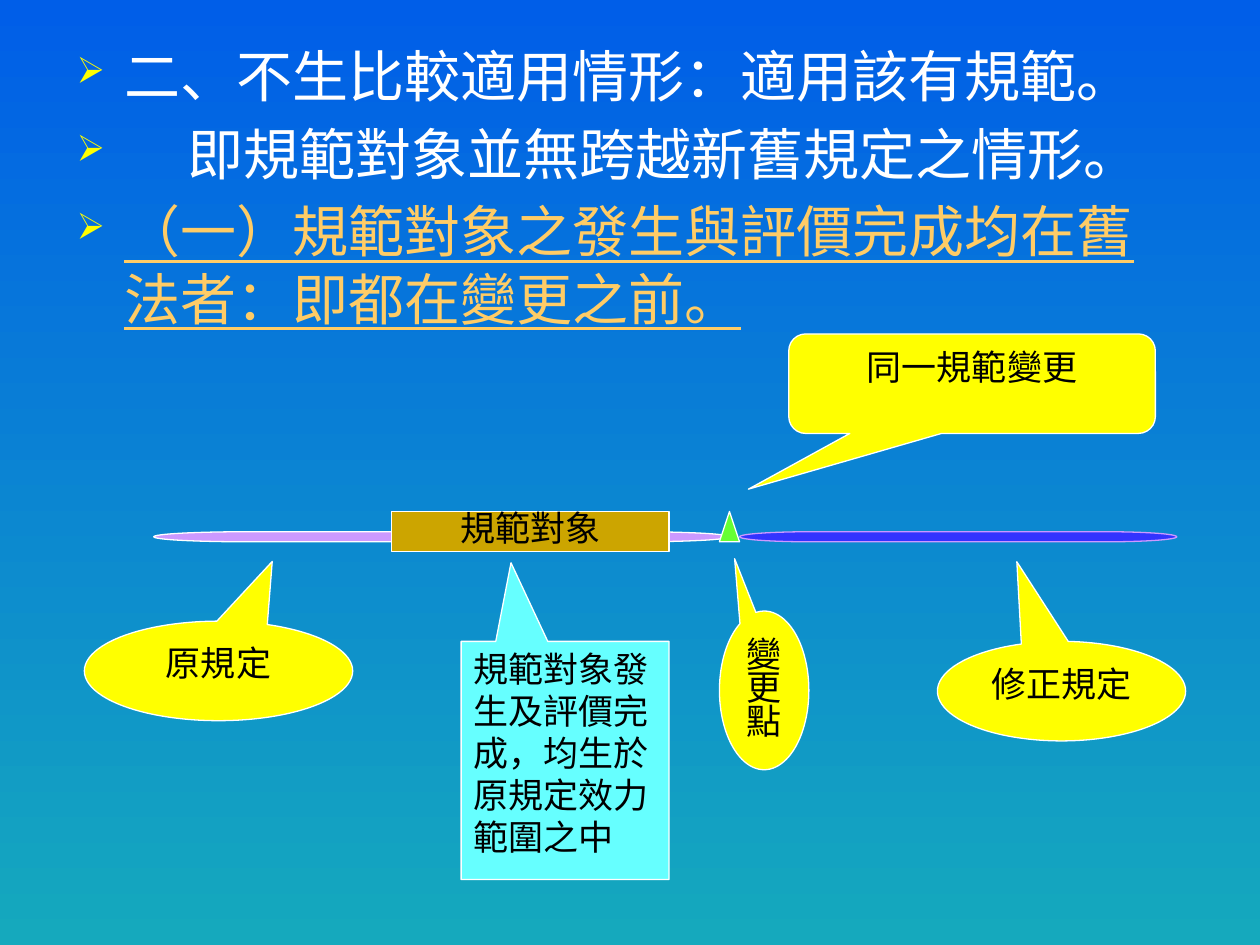
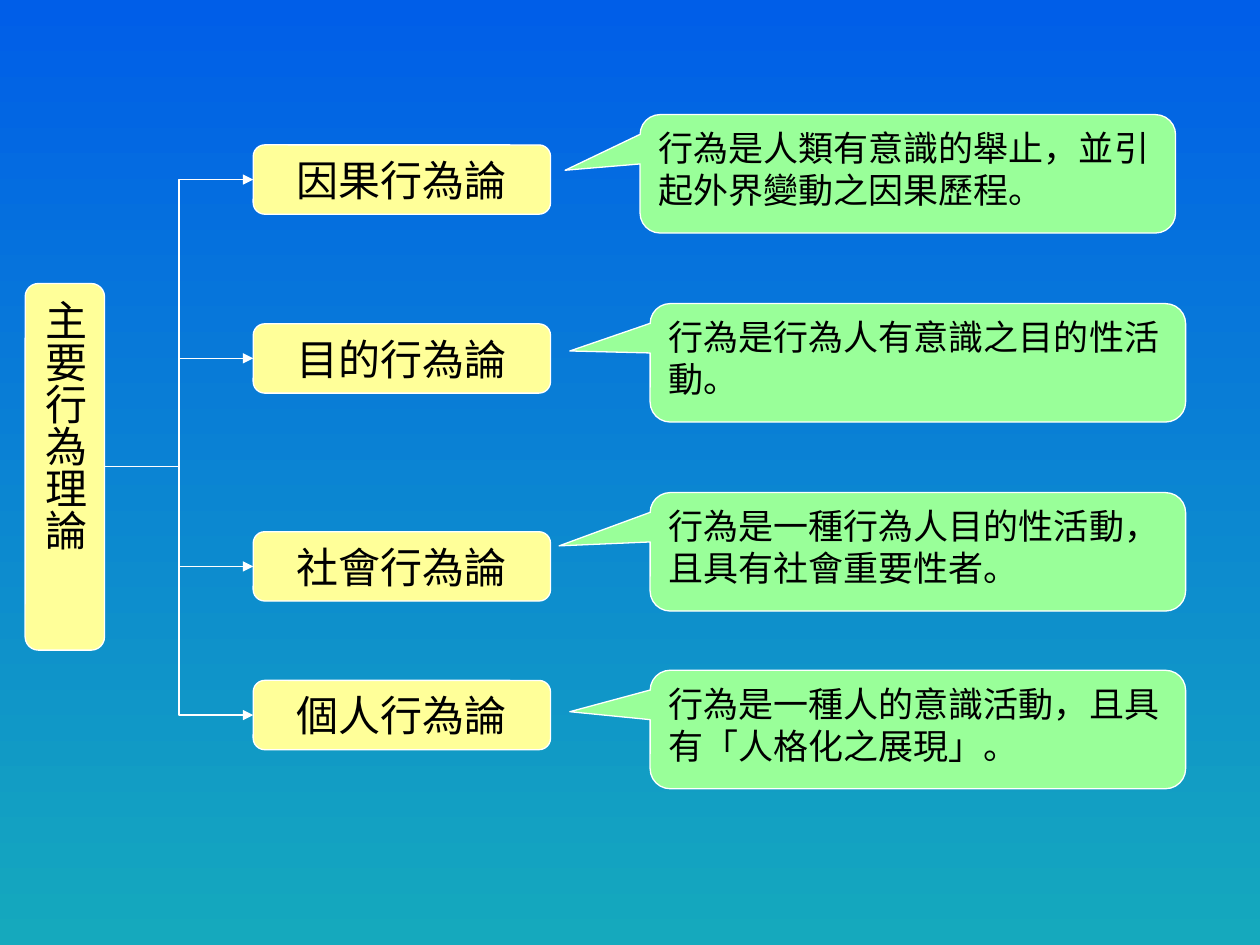
"""Build two slides on the scope of rules and the theories of action."""
from lxml.etree import SubElement
from pptx import Presentation
from pptx.dml.color import RGBColor
from pptx.enum.shapes import MSO_CONNECTOR, MSO_SHAPE
from pptx.enum.text import MSO_ANCHOR, PP_ALIGN
from pptx.oxml.ns import qn
from pptx.util import Inches, Pt

WHITE, BLACK, YELLOW = "FFFFFF", "000000", "FFFF00"
CREAM, GREEN, LILAC = "FFFF99", "99FF99", "CC99FF"
hue = RGBColor.from_string


def write(para, text, font="Arial", size=20, color=BLACK, line=False,
          align=PP_ALIGN.LEFT, space=None):
    run = para.add_run()
    run.text = text
    run.font.name = font
    run.font.size = Pt(size)
    run.font.color.rgb = hue(color)
    if line:
        run.font.underline = True
    para.alignment = align
    if space:
        para.line_spacing = space


def draw(slide, kind, box, fill, text="", edge=WHITE, tip=(), mid=False, **form):
    shape = slide.shapes.add_shape(kind, *map(Inches, box))
    shape.shadow.inherit = False
    shape.fill.solid()
    shape.fill.fore_color.rgb = hue(fill)
    shape.line.color.rgb = hue(edge)
    shape.line.width = Pt(0.75)
    for i, value in enumerate(tip):
        shape.adjustments[i] = value
    if text:
        frame = shape.text_frame
        frame.word_wrap = not mid
        frame.vertical_anchor = MSO_ANCHOR.MIDDLE if mid else MSO_ANCHOR.TOP
        write(frame.paragraphs[0], text, **form)
    return shape


deck = Presentation()
deck.slide_width, deck.slide_height = Inches(10), Inches(7.5)
back = deck.slide_master.background.fill
back.gradient()
back.gradient_angle = 270
for stop, color in zip(back.gradient_stops, ("005EE8", "15A9BD")):
    stop.color.rgb = hue(color)
blank = deck.slide_layouts[6]

slide = deck.slides.add_slide(blank)
frame = slide.shapes.add_textbox(*map(Inches, (0.51, 0.28, 9, 6.69))).text_frame
frame.word_wrap = True
points = [
    ("二、不生比較適用情形：適用該有規範。", 0.38, WHITE, False),
    ("即規範對象並無跨越新舊規定之情形。", 0.88, WHITE, False),
    ("（一）規範對象之發生與評價完成均在舊法者：即都在變更之前。", 0.38, "FFCC66", True),
]
for i, (text, indent, color, line) in enumerate(points):
    para = frame.add_paragraph() if i else frame.paragraphs[0]
    write(para, text, font="Lato", size=32, color=color, line=line)
    para.space_before = Pt(6)
    props = para._p.get_or_add_pPr()
    props.set("marL", str(Inches(indent)))
    props.set("indent", str(-Inches(indent)))
    SubElement(SubElement(props, qn("a:buClr")), qn("a:srgbClr"), val=YELLOW)
    SubElement(props, qn("a:buSzPct"), val="65000")
    SubElement(props, qn("a:buChar"), char="➢")

center = PP_ALIGN.CENTER
bar = MSO_SHAPE.FLOWCHART_TERMINATOR
round_call = MSO_SHAPE.ROUNDED_RECTANGULAR_CALLOUT
draw(slide, bar, (1.22, 4.22, 4.57, 0.08), LILAC)
draw(slide, MSO_SHAPE.RECTANGLE, (3.11, 4.06, 2.2, 0.32), "CCA500", "規範對象",
     mid=True, align=center, space=0.8)
draw(slide, bar, (5.87, 4.22, 3.47, 0.08), "3333FF", edge=LILAC)
draw(slide, round_call, (6.26, 2.65, 2.91, 0.79), YELLOW, "同一規範變更",
     tip=(-0.61, 1.06, 0.17), align=center)
for text, box, tip, space in [
    ("變更點", (5.71, 4.85, 0.71, 1.26), (-0.33, -0.83), 0.8),
    ("原規定", (0.67, 4.93, 2.13, 0.79), (0.2, -1.1), None),
    ("修正規定", (7.44, 5.09, 1.97, 0.79), (-0.18, -1.3), None),
]:
    draw(slide, MSO_SHAPE.OVAL_CALLOUT, box, YELLOW, text, tip=tip,
         align=center, space=space)
draw(slide, MSO_SHAPE.RECTANGULAR_CALLOUT, (3.66, 5.09, 1.65, 1.89), "66FFFF",
     "規範對象發生及評價完成，均生於原規定效力範圍之中", tip=(-0.26, -0.83))
draw(slide, MSO_SHAPE.ISOSCELES_TRIANGLE, (5.71, 4.06, 0.16, 0.24), "66FF33")

slide = deck.slides.add_slide(blank)
card = MSO_SHAPE.FLOWCHART_ALTERNATE_PROCESS
label = {"mid": True, "size": 24, "align": center}
root = draw(slide, card, (0.2, 2.25, 0.63, 2.91), CREAM, "主要行為理論", **label)
root.text_frame._txBody.bodyPr.set("vert", "eaVert")
views = [
    ("因果行為論", 1.15, "行為是人類有意識的舉止，並引起外界變動之因果歷程。",
     5.08, 0.91, (-0.64, -0.03)),
    ("目的行為論", 2.57, "行為是行為人有意識之目的性活動。",
     5.16, 2.41, (-0.65, -0.1)),
    ("社會行為論", 4.22, "行為是一種行為人目的性活動，且具有社會重要性者。",
     5.16, 3.91, (-0.67, -0.05)),
    ("個人行為論", 5.4, "行為是一種人的意識活動，且具有「人格化之展現」。",
     5.16, 5.32, (-0.65, -0.15)),
]
for name, top, note, left, head, tip in views:
    view = draw(slide, card, (2.01, top, 2.36, 0.55), CREAM, name, **label)
    draw(slide, round_call, (left, head, 4.25, 0.94), GREEN, note, tip=(*tip, 0.17))
    wire = slide.shapes.add_connector(MSO_CONNECTOR.ELBOW, 0, 0, 0, 0)
    wire.begin_connect(root, 3)
    wire.end_connect(view, 1)
    wire.line.color.rgb = hue(WHITE)
    wire.line.width = Pt(0.75)
    SubElement(wire.line._get_or_add_ln(), qn("a:tailEnd"), type="triangle")
    SubElement(wire._element.spPr, qn("a:effectLst"))

deck.save("out.pptx")
